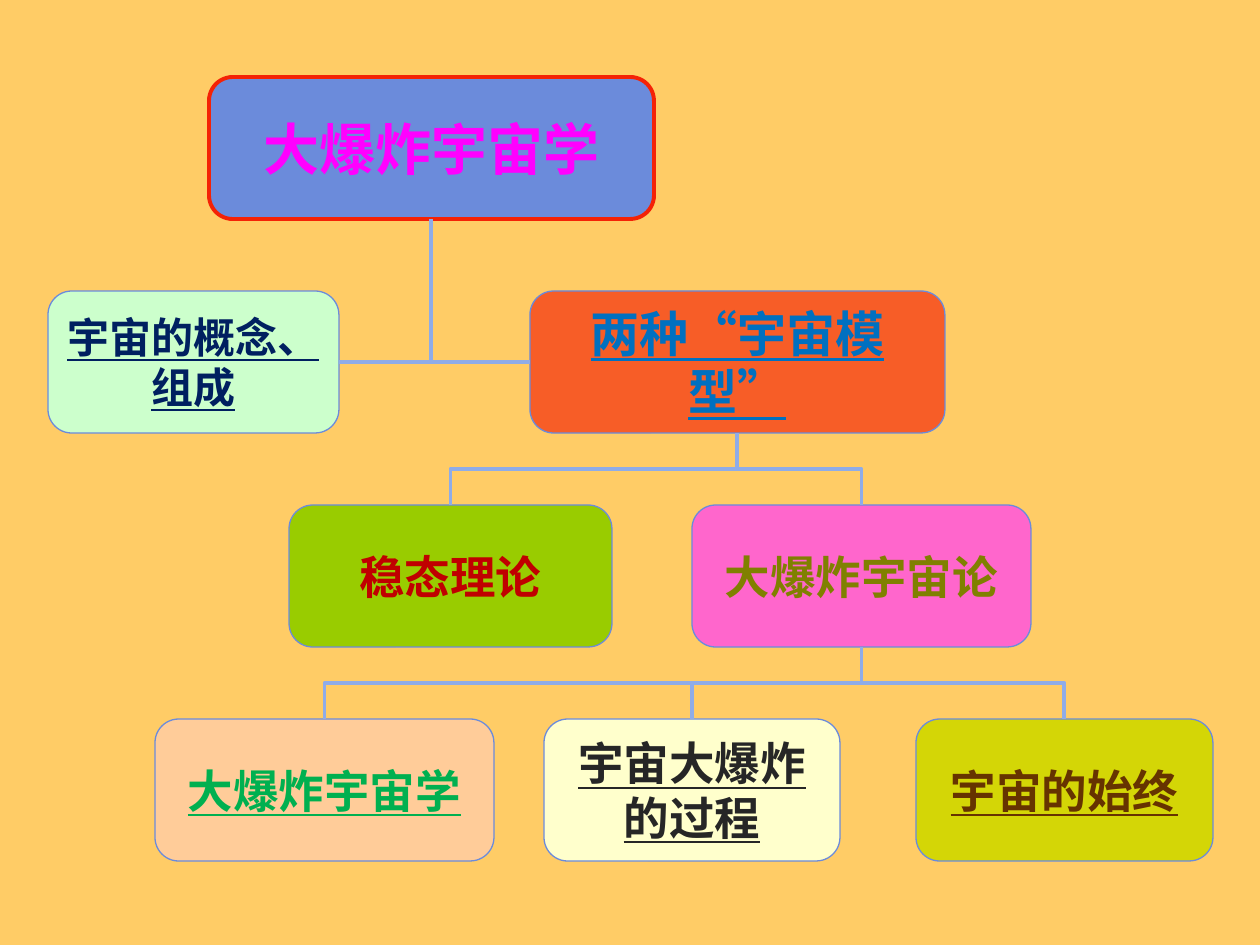
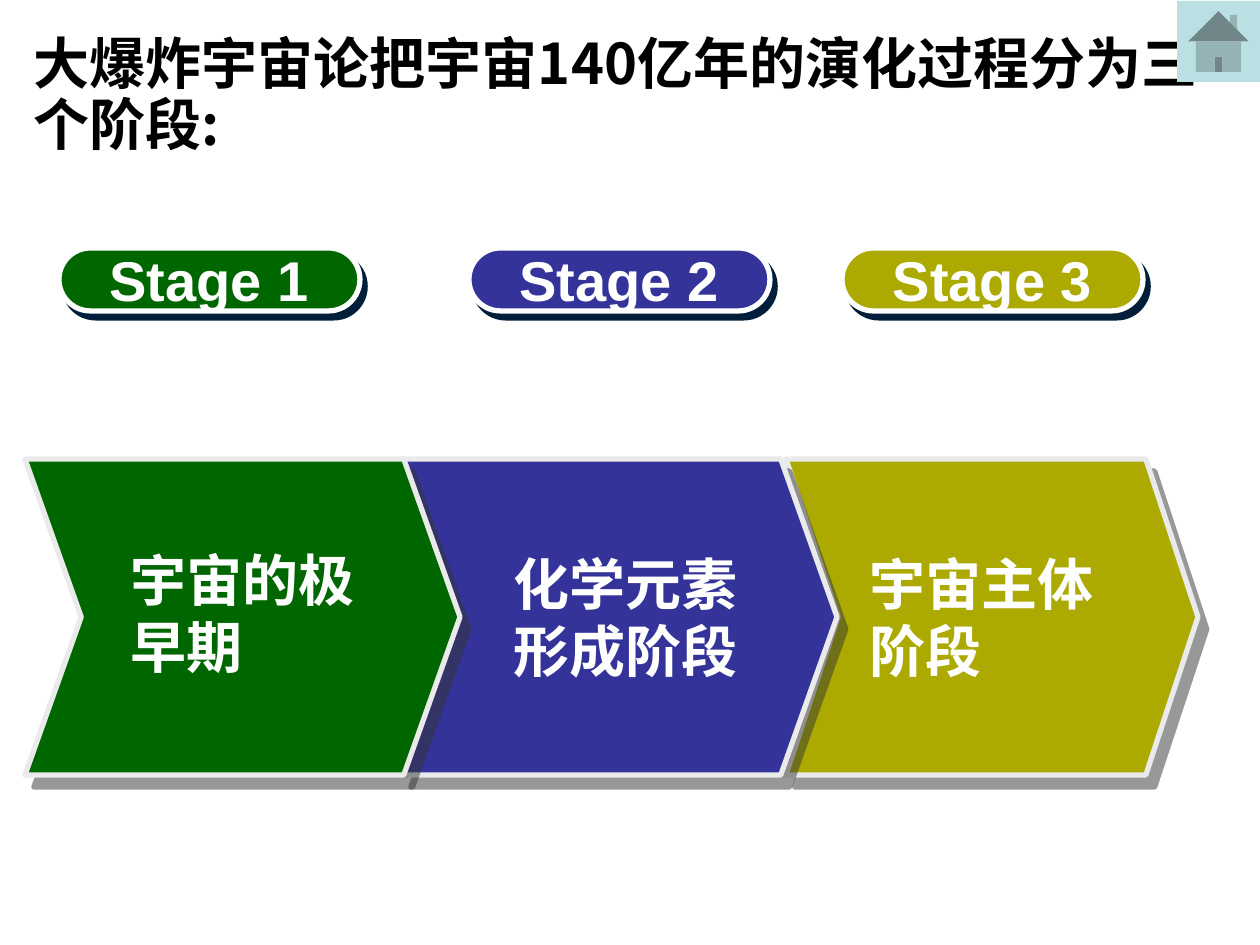
from lxml import etree
from pptx import Presentation
from pptx import util as u
from pptx.dml import color
from pptx.enum import shapes, text
from pptx.oxml import ns

# Shared style
PX = 914400 / 126
CJK, CJK_ALT, LATIN = "Noto Sans CJK SC", "Noto Sans CJK JP", "Arial"
WHITE, BLACK = "FFFFFF", "000000"
BOX_EDGE, BRANCH = "6B8BDB", "8FACE8"
TOP, LEFT, BOTTOM, RIGHT = range(4)


def rgb(value):
    return color.RGBColor.from_string(value)


def px(*lengths):
    return [u.Emu(round(n * PX)) for n in lengths]


def add_xml(parent, tag, **attributes):
    return etree.SubElement(parent, ns.qn(tag), attributes)


def set_values(target, values):
    for name, value in values.items():
        setattr(target, name, value)


class Deck:
    def __init__(self, width, height):
        self.prs = Presentation()
        self.prs.slide_width, self.prs.slide_height = px(width, height)
        self.slide = None

    def new_slide(self, background):
        self.slide = self.prs.slides.add_slide(self.prs.slide_layouts[6])
        fill = self.slide.background.fill
        fill.solid()
        fill.fore_color.rgb = rgb(background)

    def put_words(self, frame, words, size, ink, font=CJK, underline=False,
                  align=None, spacing=None, **frame_values):
        set_values(frame, {"word_wrap": True, **frame_values})
        paragraph = frame.paragraphs[0]
        set_values(paragraph, {"alignment": align, "line_spacing": spacing})
        run = paragraph.add_run()
        run.text = words
        set_values(run.font, {"name": font, "size": u.Pt(size), "bold": True,
                              "underline": underline})
        run.font.color.rgb = rgb(ink)
        add_xml(run.font._element, "a:ea", typeface=CJK if font == LATIN else font)

    def label(self, place, words, size, ink, **values):
        box = self.slide.shapes.add_textbox(*px(*place))
        self.put_words(box.text_frame, words, size, ink, **values)

    def shape(self, kind, place, fill, edge=None, weight=0.75, adjust=None, shadow=None):
        item = self.slide.shapes.add_shape(kind, *px(*place))
        item.shadow.inherit = False
        item.fill.solid()
        item.fill.fore_color.rgb = rgb(fill)
        if edge:
            item.line.color.rgb = rgb(edge)
            item.line.width = u.Pt(weight)
        else:
            item.line.fill.background()
        if adjust is not None:
            item.adjustments[0] = adjust
        if shadow:
            self.drop_shadow(item, *shadow)
        return item

    def drop_shadow(self, item, tint, opacity, distance, angle):
        effects = item._element.spPr.find(ns.qn("a:effectLst"))
        outer = add_xml(effects, "a:outerShdw", dist=str(int(u.Pt(distance))),
                        dir=str(angle * 60000), algn="ctr", rotWithShape="0")
        tone = add_xml(outer, "a:srgbClr", val=tint)
        add_xml(tone, "a:alpha", val=str(opacity * 1000))

    def elbow(self, start, start_side, end, end_side):
        link = self.slide.shapes.add_connector(shapes.MSO_CONNECTOR.ELBOW, 0, 0, 0, 0)
        link.begin_connect(start, start_side)
        link.end_connect(end, end_side)
        link.line.color.rgb = rgb(BRANCH)
        link.line.width = u.Pt(2.25)
        add_xml(link._element.spPr, "a:effectLst")
        return link

    def corner(self, child, side, parent):
        """One bend: sideways from the child, then up to the parent."""
        link = self.elbow(child, side, parent, BOTTOM)
        link._element.spPr.find(ns.qn("a:prstGeom")).set("prst", "bentConnector2")

    def branch(self, parent, child):
        """Two bends: down, across and down, as a turned elbow."""
        link = self.elbow(parent, BOTTOM, child, TOP)
        drop, across = link.height, link.width
        middle_x, middle_y = link.left + across // 2, link.top + drop // 2
        to_right = link.end_x > link.begin_x
        set_values(link, {"left": middle_x - drop // 2, "top": middle_y - across // 2,
                          "width": drop, "height": across})
        frame = link._element.spPr.find(ns.qn("a:xfrm"))
        frame.set("rot", str((270 if to_right else 90) * 60000))
        frame.set("flipH", "1" if to_right else "0")
        frame.set("flipV", "0")


def topic_tree(deck):
    deck.new_slide("FFCC66")
    # Topics: row, left, width, fill, words, size, ink, font, underline
    topics = {
        "root": (0, 209, 445, "6B8BDB", "大爆炸宇宙学", 32, "FF00FF", CJK_ALT, False),
        "concept": (1, 48, 291, "CCFFCC", "宇宙的概念、组成", 24, "002060", CJK_ALT, True),
        "models": (1, 530, 415, "F75D27", "两种“宇宙模型”", 28, "0070C0", CJK, True),
        "steady": (2, 289, 323, "99CC00", "稳态理论", 26, "C00000", LATIN, False),
        "bang": (2, 692, 339, "FF66CC", "大爆炸宇宙论", 26, "808000", LATIN, False),
        "cosmology": (3, 155, 339, "FFCC99", "大爆炸宇宙学", 26, "00B050", LATIN, True),
        "process": (3, 544, 296, "FFFFCC", "宇宙大爆炸的过程", 26, "262626", LATIN, True),
        "fate": (3, 916, 297, "D4D606", "宇宙的始终", 26, "663300", LATIN, True),
    }
    boxes = {}
    for key, (row, left, width, fill, words, size, ink, font, underline) in topics.items():
        edge, weight = ("F42206", 2.25) if key == "root" else (BOX_EDGE, 0.75)
        boxes[key] = deck.shape(shapes.MSO_SHAPE.ROUNDED_RECTANGLE,
                                (left, 77 + 214 * row, width, 142),
                                fill, edge, weight, 0.167)
        deck.put_words(boxes[key].text_frame, words, size, ink, font, underline,
                       text.PP_ALIGN.CENTER, vertical_anchor=text.MSO_ANCHOR.MIDDLE)

    # Branches
    deck.corner(boxes["concept"], RIGHT, boxes["root"])
    deck.corner(boxes["models"], LEFT, boxes["root"])
    children = {"models": ("steady", "bang"), "bang": ("cosmology", "process", "fate")}
    for parent, keys in children.items():
        for key in keys:
            deck.branch(boxes[parent], boxes[key])


def three_stages(deck):
    deck.new_slide(WHITE)
    deck.label((21, 30, 1196, 857), "大爆炸宇宙论把宇宙140亿年的演化过程分为三个阶段:",
               32, BLACK, spacing=0.9)

    # Stages: fill, arrow left, width and notch, pill left, label place, words
    stages = [
        ("006600", 25, 435, 0.178, 59, (118, 539, 282, 149), "宇宙的极早期"),
        ("333399", 402, 435, 0.178, 469, (501, 543, 285, 149), "化学元素形成阶段"),
        ("ACAA00", 786, 412, 0.165, 842, (857, 543, 286, 149), "宇宙主体阶段"),
    ]
    # Arrows, the first one in front
    for fill, left, width, notch, *_ in reversed(stages):
        deck.shape(shapes.MSO_SHAPE.CHEVRON, (left, 459, width, 316), fill,
                   "EAEAEA", 3, notch, ("333333", 50, 8.6, 54))
    # Pills
    for number, (fill, _, _, _, left, _, _) in enumerate(stages, 1):
        pill = deck.shape(shapes.MSO_SHAPE.ROUNDED_RECTANGLE, (left, 248, 301, 63), fill,
                          WHITE, 3, 0.5, ("001D3A", 100, 5, 53))
        deck.put_words(pill.text_frame, f"Stage {number}", 32, WHITE, LATIN,
                       align=text.PP_ALIGN.CENTER, word_wrap=False,
                       vertical_anchor=text.MSO_ANCHOR.MIDDLE)
    # Stage names
    for *_, place, words in stages:
        deck.label(place, words, 32, WHITE, auto_size=text.MSO_AUTO_SIZE.SHAPE_TO_FIT_TEXT)

    # Home button
    deck.shape(shapes.MSO_SHAPE.ACTION_BUTTON_HOME, (1177, 1, 83, 81), "BBE0E3")


def main():
    deck = Deck(1260, 945)
    topic_tree(deck)
    three_stages(deck)
    deck.prs.save("out.pptx")


if __name__ == "__main__":
    main()
